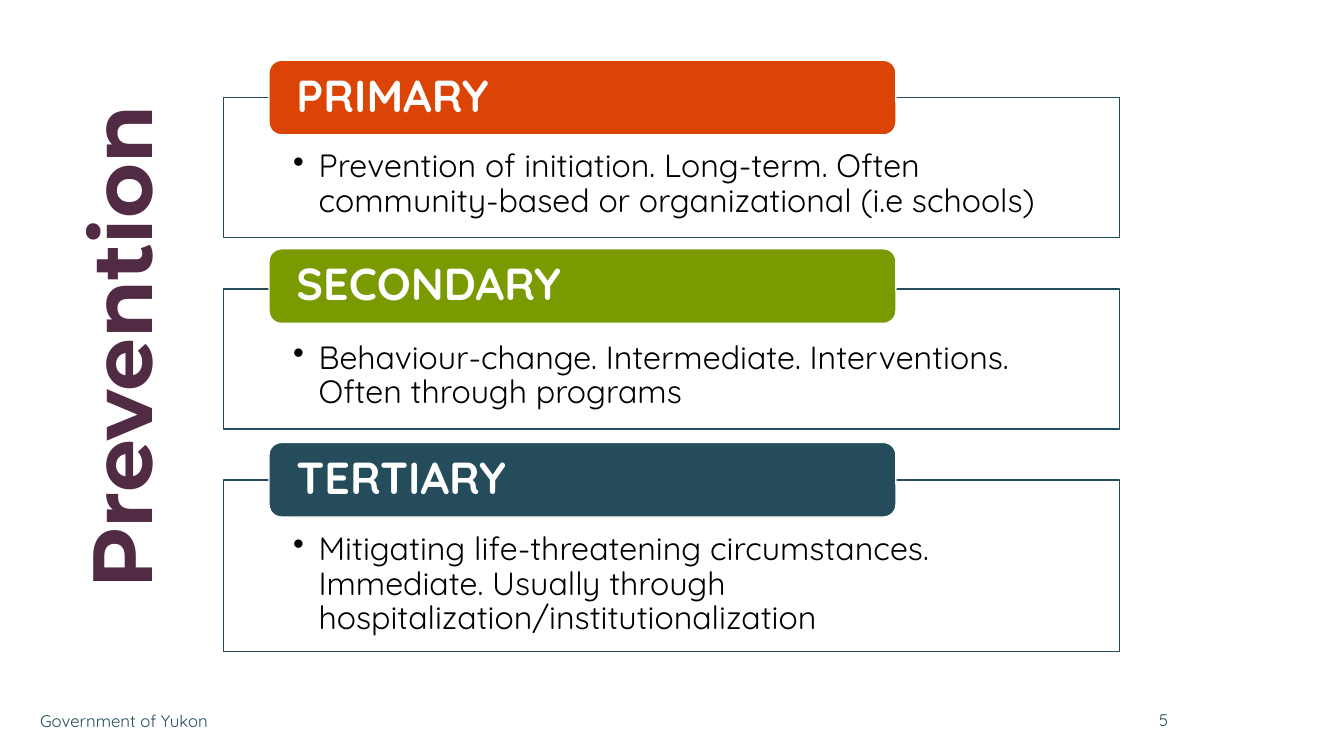
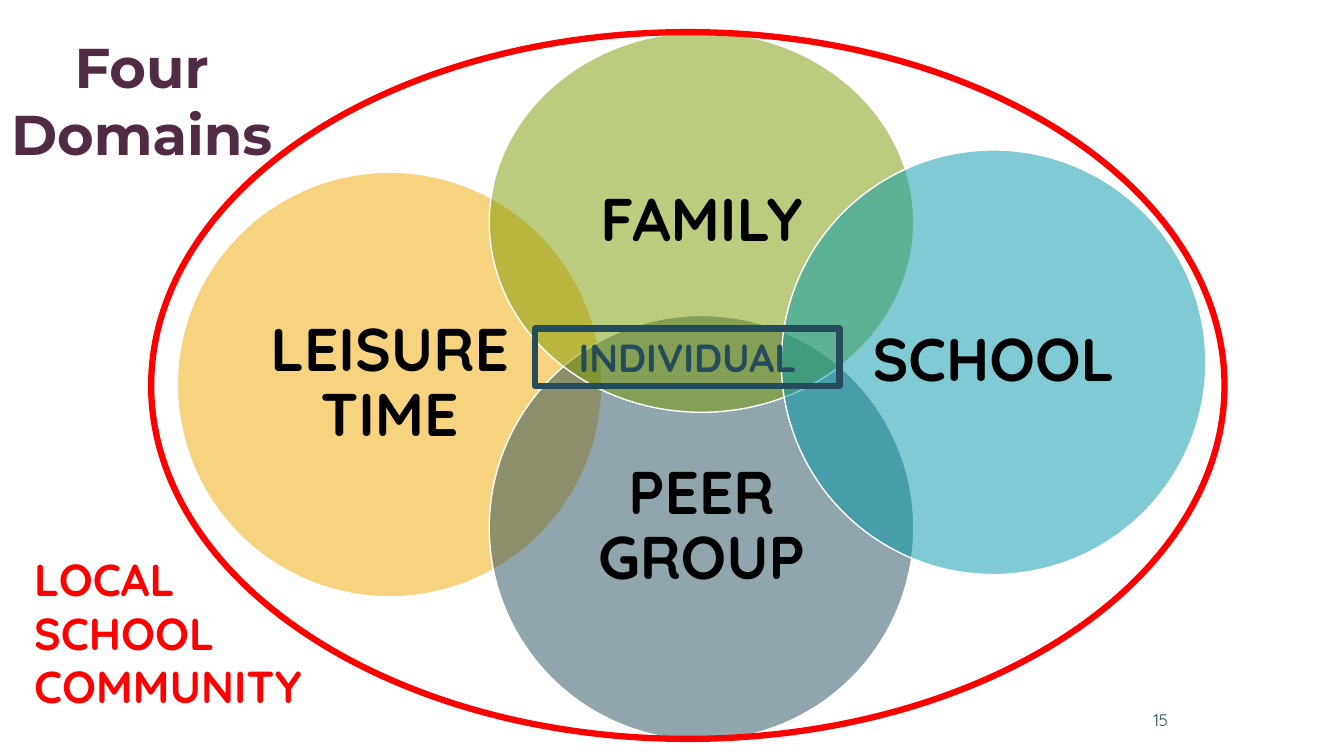
"""Build two slides: the prevention levels and the four domains."""
import pptx
import pptx.dml.color
import pptx.enum.shapes
import pptx.enum.text
import pptx.oxml.ns
import pptx.util
from lxml import etree

Cm = pptx.util.Cm
RGBColor = pptx.dml.color.RGBColor
Shape = pptx.enum.shapes.MSO_SHAPE
Align = pptx.enum.text.PP_ALIGN
Anchor = pptx.enum.text.MSO_ANCHOR
qn = pptx.oxml.ns.qn

BLACK = RGBColor(0x00, 0x00, 0x00)
WHITE = RGBColor(0xFF, 0xFF, 0xFF)
RED = RGBColor(0xFF, 0x00, 0x00)
PLUM = RGBColor(0x51, 0x2A, 0x44)
NAVY = RGBColor(0x24, 0x4C, 0x5A)
ORANGE = RGBColor(0xDC, 0x44, 0x05)
GREEN = RGBColor(0x7A, 0x9A, 0x01)
YELLOW = RGBColor(0xF2, 0xA9, 0x00)
TEAL = RGBColor(0x00, 0x97, 0xA9)

TITLE_FONT = "Montserrat"
BODY_FONT = "Quicksand"
INSETS = (0.25, 0.13, 0.25, 0.13)
BULLET_INDENT = 0.64

LEVELS = [
    ("PRIMARY", ORANGE, 1.52, 3.53,
     "Prevention of initiation. Long-term. Often community-based or organizational (i.e schools)"),
    ("SECONDARY", GREEN, 6.27, 3.53,
     "Behaviour-change. Intermediate. Interventions. Often through programs"),
    ("TERTIARY", NAVY, 11.15, 4.32,
     "Mitigating life-threatening circumstances. Immediate. Usually through "
     "hospitalization/institutionalization"),
]
PANEL_LEFT, PANEL_TOP, PANEL_WIDTH, PANEL_PITCH = 5.64, 2.46, 22.58, 4.82
HEADER_LEFT, HEADER_WIDTH, HEADER_HEIGHT = 6.78, 15.8, 1.88

CIRCLE = 10.7
DOMAINS = [
    ("LEISURE TIME", YELLOW, 4.47, 4.34, CIRCLE),
    ("PEER GROUP", NAVY, 12.33, 7.95, CIRCLE),
    ("FAMILY", GREEN, 12.33, 0.81, 9.58),
    ("SCHOOL", TEAL, 19.69, 3.78, CIRCLE),
]


def write_text(shape, text, size, color, font=BODY_FONT, bold=False, align=Align.LEFT,
               anchor=Anchor.TOP, insets=INSETS, spacing=None, bullet=False):
    """Fill a shape with one paragraph per line of text."""
    frame = shape.text_frame
    frame.word_wrap = True
    frame.vertical_anchor = anchor
    (frame.margin_left, frame.margin_top,
     frame.margin_right, frame.margin_bottom) = map(Cm, insets)
    frame.text = text
    for paragraph in frame.paragraphs:
        paragraph.alignment = align
        if bullet:
            properties = paragraph._p.get_or_add_pPr()
            properties.set("marL", str(Cm(BULLET_INDENT)))
            properties.set("indent", str(-Cm(BULLET_INDENT)))
            etree.SubElement(properties, qn("a:buChar")).set("char", "•")
        if spacing:
            paragraph.line_spacing = spacing
        for run in paragraph.runs:
            run.font.name = font
            run.font.size = pptx.util.Pt(size)
            run.font.bold = bold
            run.font.color.rgb = color


def add_text(slide, box, text, size, color, **text_format):
    """Add a text box and return it."""
    shape = slide.shapes.add_textbox(*map(Cm, box))
    write_text(shape, text, size, color, **text_format)
    return shape


def add_figure(slide, kind, box, line, fill=None, line_width=1, opacity=None):
    """Add a preset shape with a flat fill and outline."""
    shape = slide.shapes.add_shape(kind, *map(Cm, box))
    shape.shadow.inherit = False
    shape.line.color.rgb = line
    shape.line.width = pptx.util.Pt(line_width)
    if fill is None:
        shape.fill.background()
    else:
        shape.fill.solid()
        shape.fill.fore_color.rgb = fill
    if opacity is not None:
        color = shape._element.spPr.find(qn("a:solidFill"))[0]
        etree.SubElement(color, qn("a:alpha")).set("val", str(opacity * 1000))
    return shape


def add_slide(presentation, number):
    """Add a blank slide with its page number."""
    slide = presentation.slides.add_slide(presentation.slide_layouts[6])
    add_text(slide, (24.84, 17.63, 4.85, 1.02), number, 12, NAVY,
             align=Align.RIGHT, anchor=Anchor.MIDDLE)
    return slide


def build_prevention(presentation):
    """Draw the three prevention levels."""
    slide = add_slide(presentation, "5")
    title = add_text(slide, (-4, 7.16, 14, 3.18), "Prevention", 60, PLUM, font=TITLE_FONT,
                     bold=True, align=Align.CENTER, anchor=Anchor.MIDDLE)
    title.rotation = 270
    add_text(slide, (0.76, 17.65, 7.62, 1.02), "Government of Yukon", 12, NAVY,
             anchor=Anchor.MIDDLE)
    for index, (name, color, header_top, height, description) in enumerate(LEVELS):
        panel_top = PANEL_TOP + index * PANEL_PITCH
        panel = add_figure(slide, Shape.RECTANGLE,
                           (PANEL_LEFT, panel_top, PANEL_WIDTH, height), NAVY, fill=WHITE)
        write_text(panel, description, 23, BLACK, insets=(1.75, 1.32, 1.75, 0.46),
                   spacing=0.9, bullet=True)
        header = add_figure(slide, Shape.ROUNDED_RECTANGLE,
                            (HEADER_LEFT, header_top, HEADER_WIDTH, HEADER_HEIGHT),
                            WHITE, fill=color)
        write_text(header, name, 32, WHITE, bold=True, anchor=Anchor.MIDDLE,
                   insets=(0.6, 0, 0.6, 0), spacing=0.9)


def build_domains(presentation):
    """Draw the overlapping domains inside the community."""
    slide = add_slide(presentation, "15")
    for name, color, left, top, height in DOMAINS:
        domain = add_figure(slide, Shape.OVAL, (left, top, CIRCLE, height), WHITE,
                            fill=color, opacity=50)
        write_text(domain, name, 43, BLACK, bold=True, align=Align.CENTER,
                   anchor=Anchor.MIDDLE, insets=(0.46,) * 4, spacing=0.9)
    add_figure(slide, Shape.OVAL, (3.81, 0.81, 27.05, 17.81), RED, line_width=4.5)
    add_text(slide, (0.61, 13.77, 10.44, 4.37), "LOCAL\nSCHOOL\nCOMMUNITY", 32, RED, bold=True)
    add_text(slide, (0, 0.69, 7.14, 3.68), "Four\nDomains", 40, PLUM, font=TITLE_FONT,
             bold=True, align=Align.CENTER)
    individual = add_figure(slide, Shape.RECTANGLE, (13.49, 8.28, 7.67, 1.45), NAVY,
                            line_width=4.5)
    write_text(individual, "INDIVIDUAL", 28, NAVY, bold=True, align=Align.CENTER)


def main():
    """Create and save the presentation."""
    presentation = pptx.Presentation()
    presentation.slide_width = Cm(33.87)
    presentation.slide_height = Cm(19.05)
    build_prevention(presentation)
    build_domains(presentation)
    presentation.save("out.pptx")


if __name__ == "__main__":
    main()
